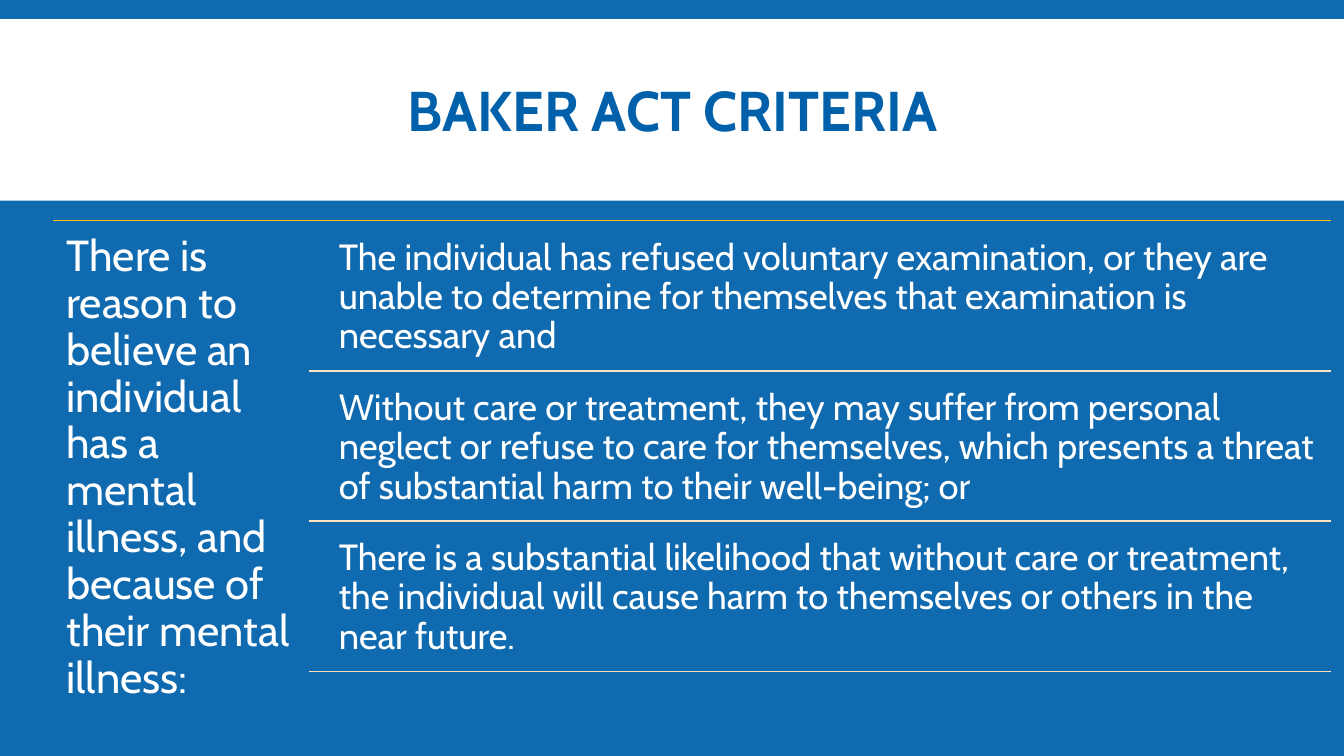
from lxml import etree
from pptx import Presentation
from pptx.dml.color import RGBColor
from pptx.enum.shapes import MSO_CONNECTOR, MSO_SHAPE
from pptx.enum.text import MSO_ANCHOR, MSO_AUTO_SIZE, PP_ALIGN
from pptx.oxml.ns import qn
from pptx.util import Inches, Pt

BLUE, WHITE, GOLD, CREAM = "0061AA", "FFFFFF", "FFC000", "FFE2BD"
RIGHT = 13.2
CRITERIA_TOP, ROW_STEP = 2.19, 1.49
CRITERIA = [
    "The individual has refused voluntary examination, or they are unable to determine "
    "for themselves that examination is necessary and",
    "Without care or treatment, they may suffer from personal neglect or refuse to care "
    "for themselves, which presents a threat of substantial harm to their well-being; or",
    "There is a substantial likelihood that without care or treatment, the individual "
    "will cause harm to themselves or others in the near future.",
]


def write(sp, text, size, color=WHITE, bold=False, align=PP_ALIGN.LEFT,
          anchor=MSO_ANCHOR.TOP, spacing=0.9, inset=0.1):
    tf = sp.text_frame
    tf.word_wrap = True
    tf.auto_size = MSO_AUTO_SIZE.NONE
    tf.vertical_anchor = anchor
    tf.margin_left = tf.margin_right = tf.margin_top = tf.margin_bottom = Inches(inset)
    p = tf.paragraphs[0]
    p.alignment, p.line_spacing = align, spacing
    r = p.add_run()
    r.text = text
    r.font.name, r.font.size, r.font.bold = "Cabin", Pt(size), bold
    r.font.color.rgb = RGBColor.from_string(color)


def add_rule(left, top, color):
    line = slide.shapes.add_connector(
        MSO_CONNECTOR.STRAIGHT, Inches(left), Inches(top), Inches(RIGHT), Inches(top))
    line.line.color.rgb = RGBColor.from_string(color)
    line.line.width = Pt(1)
    etree.SubElement(line.element.spPr, qn("a:effectLst"))


prs = Presentation()
prs.slide_width, prs.slide_height = Inches(13.33), Inches(7.5)
slide = prs.slides.add_slide(prs.slide_layouts[5])
slide.background.fill.solid()
slide.background.fill.fore_color.rgb = RGBColor.from_string("0F6AAF")

# Title on a white band, which lies behind it
title = slide.shapes.title
title.left, title.top = Inches(1.32), Inches(0.31)
title.width, title.height = Inches(10.7), Inches(1.65)
write(title, "BAKER ACT CRITERIA", 40, color=BLUE, bold=True, align=PP_ALIGN.CENTER,
      anchor=MSO_ANCHOR.MIDDLE, spacing=0.85)

band = slide.shapes.add_shape(
    MSO_SHAPE.RECTANGLE, 0, Inches(0.19), prs.slide_width, Inches(1.8))
band.shadow.inherit = False
band.fill.solid()
band.fill.fore_color.rgb = RGBColor.from_string(WHITE)
band.line.fill.background()
title.element.addprevious(band.element)

# Shared condition on the left
add_rule(0.53, CRITERIA_TOP, GOLD)
condition = slide.shapes.add_textbox(
    Inches(0.53), Inches(CRITERIA_TOP), Inches(2.53), Inches(4.54))
write(condition, "There is reason to believe an individual has a mental illness, "
      "and because of their mental illness:", 31, inset=0.13)

# Criteria on the right, each closed by a rule
for i, criterion in enumerate(CRITERIA):
    top = CRITERIA_TOP + i * ROW_STEP
    box = slide.shapes.add_textbox(
        Inches(3.25), Inches(top + 0.07), Inches(9.95), Inches(1.42))
    write(box, criterion, 26, inset=0.11)
    add_rule(3.06, top + ROW_STEP, CREAM)

prs.save("out.pptx")
